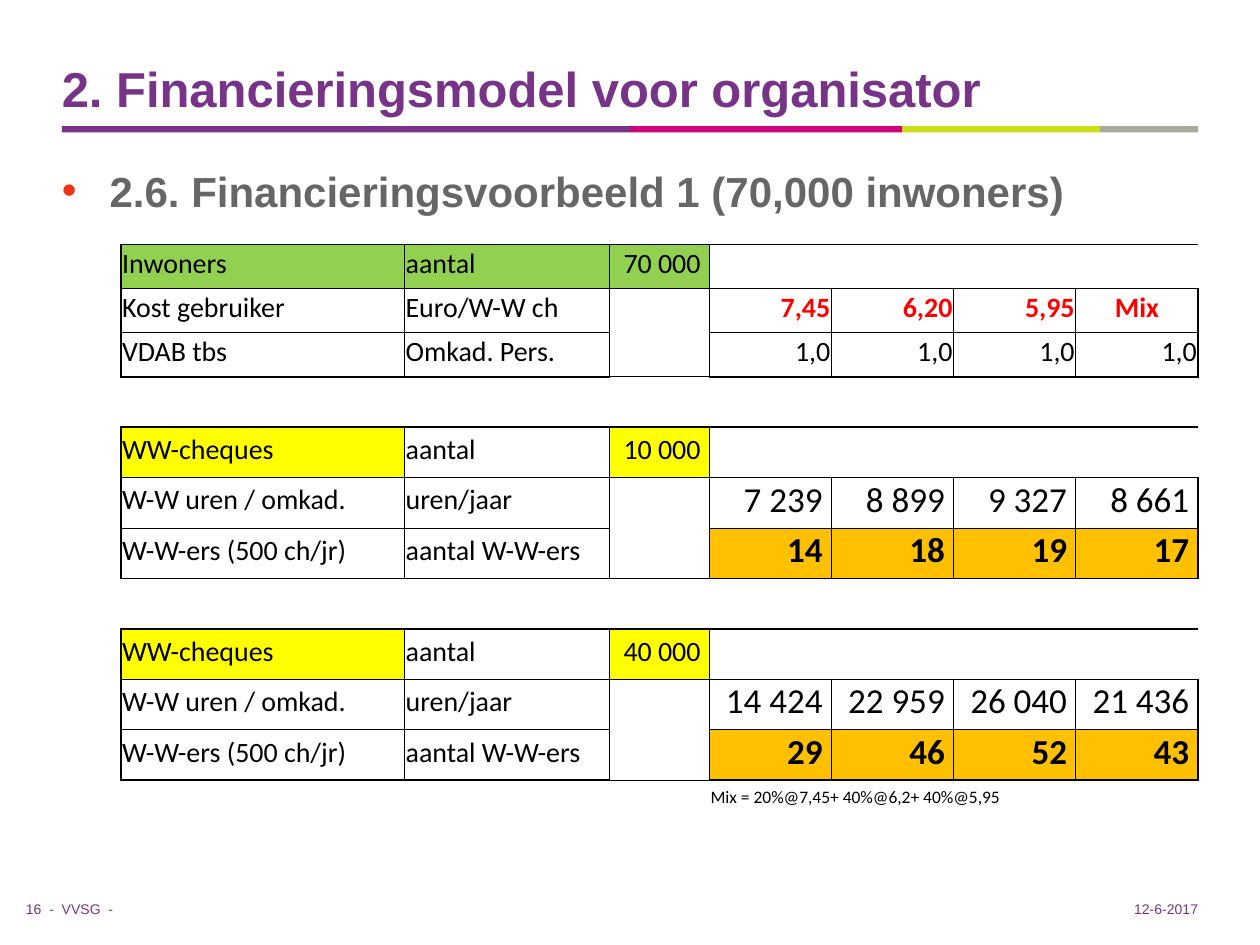
from lxml.etree import SubElement
from pptx import Presentation
from pptx.dml.color import RGBColor
from pptx.enum.shapes import MSO_SHAPE
from pptx.enum.text import MSO_ANCHOR, MSO_AUTO_SIZE, PP_ALIGN
from pptx.oxml.ns import qn
from pptx.util import Inches, Pt

PURPLE = "773388"
GREEN, YELLOW, ORANGE = "92D050", "FFFF00", "FFC000"
NO_STYLE = "{2D5ABB26-0587-4C30-8999-92F81FD0307C}"
COL_WIDTHS = [2.25, 1.63, 0.79, 0.97, 0.97, 0.97, 0.97]
ROW_HEIGHTS = [0.35] * 3 + [0.4] * 8 + [0.32]
NOTE = "Mix = 20%@7,45+ 40%@6,2+ 40%@5,95"


def cheque_block(cheques, hours, workers):
    return [
        ["WW-cheques", "aantal", cheques],
        ["W-W uren / omkad.", "uren/jaar", "", *hours],
        ["W-W-ers (500 ch/jr)", "aantal W-W-ers", "", *workers],
    ]


BLOCKS = [
    [
        ["Inwoners", "aantal", "70 000"],
        ["Kost gebruiker", "Euro/W-W ch", "", "7,45", "6,20", "5,95", "Mix"],
        ["VDAB tbs", "Omkad. Pers.", "", "1,0", "1,0", "1,0", "1,0"],
    ],
    cheque_block("10 000", ["7 239", "8 899", "9 327", "8 661"], ["14", "18", "19", "17"]),
    cheque_block("40 000", ["14 424", "22 959", "26 040", "21 436"], ["29", "46", "52", "43"]),
]


def color(value):
    return RGBColor.from_string(value)


def place(sp, box):
    sp.left, sp.top, sp.width, sp.height = [Inches(v) for v in box]


def format_runs(p, size, hue, bold=False, name="Arial"):
    for r in p.runs:
        r.font.name, r.font.size, r.font.bold = name, Pt(size), bold
        r.font.color.rgb = color(hue)


def set_frame(tf, anchor):
    tf.margin_left = tf.margin_top = tf.margin_right = tf.margin_bottom = 0
    tf.vertical_anchor = anchor
    tf.auto_size = MSO_AUTO_SIZE.NONE
    tf.word_wrap = True


def add_title(s, box, text):
    sp = s.shapes.title
    place(sp, box)
    tf = sp.text_frame
    tf.text = text
    set_frame(tf, MSO_ANCHOR.BOTTOM)
    tf.paragraphs[0].alignment = PP_ALIGN.LEFT
    format_runs(tf.paragraphs[0], 28, PURPLE, True)


def add_body(s, box, text):
    sp = s.placeholders[1]
    place(sp, box)
    tf = sp.text_frame
    tf.text = text
    set_frame(tf, MSO_ANCHOR.TOP)
    p = tf.paragraphs[0]
    p.space_before = Pt(0)
    pPr = p._p.get_or_add_pPr()
    pPr.set("marL", str(Inches(0.38)))
    pPr.set("indent", str(-Inches(0.38)))
    SubElement(SubElement(pPr, qn("a:buClr")), qn("a:srgbClr"), val="EE3311")
    SubElement(pPr, qn("a:buChar"), char="•")
    format_runs(p, 24, "666666", True)


def add_color_bar(s, box):
    left, top, _, height = box
    for width, hue in [(4.51, PURPLE), (2.16, "CC0077"), (1.57, "CCDD11"), (0.78, "AAAA99")]:
        sp = s.shapes.add_shape(MSO_SHAPE.RECTANGLE, 0, 0, 0, 0)
        place(sp, (left, top, width, height))
        sp.shadow.inherit = False
        sp.fill.solid()
        sp.fill.fore_color.rgb = color(hue)
        sp.line.fill.background()
        left += width


def add_footer(s, box, text, align):
    sp = s.shapes.add_textbox(0, 0, 0, 0)
    place(sp, box)
    tf = sp.text_frame
    tf.text = text
    set_frame(tf, MSO_ANCHOR.BOTTOM)
    tf.paragraphs[0].alignment = align
    format_runs(tf.paragraphs[0], 8, PURPLE)


def set_borders(cell, widths):
    tcPr = cell._tc.get_or_add_tcPr()
    for side in "LRTB":
        if side in widths:
            ln = SubElement(tcPr, qn(f"a:ln{side}"), w=str(Pt(widths[side])))
            fill = SubElement(ln, qn("a:solidFill"))
            SubElement(fill, qn("a:srgbClr"), val="000000")


def block_borders(row, col):
    widths = {
        "L": 1 if col == 0 else 0.5,
        "R": 1 if col == 6 else 0.5,
        "T": 1 if row == 0 else 0.5,
        "B": 1 if row == 2 else 0.5,
    }
    hidden = ""
    if row == 0 and col >= 3:
        hidden = "R" if col == 3 else "LR"
    elif row > 0 and col == 2:
        hidden = "B" if row == 1 else "TB"
    return {side: w for side, w in widths.items() if side not in hidden}


def block_style(block, row, col):
    fill, size, hue, bold = None, 16, "000000", False
    if row == 0 and col < 3:
        if block == 0:
            fill = GREEN
        elif col != 1:
            fill = YELLOW
    elif col >= 3 and block > 0 and row > 0:
        size, bold = 20, row == 2
        fill = ORANGE if row == 2 else None
    elif col >= 3 and row == 1:
        hue, bold = "FF0000", True
    return fill, size, hue, bold


def fill_cell(cell, text, fill=None, size=10, hue="000000", bold=False, align=PP_ALIGN.LEFT):
    cell.margin_left = cell.margin_top = cell.margin_right = Inches(0.01)
    cell.margin_bottom = Inches(0.05)
    cell.vertical_anchor = MSO_ANCHOR.MIDDLE
    if fill:
        cell.fill.solid()
        cell.fill.fore_color.rgb = color(fill)
    else:
        cell.fill.background()
    p = cell.text_frame.paragraphs[0]
    if not text:
        SubElement(p._p, qn("a:endParaRPr"), sz="1000")
        return
    p.text = text
    p.alignment = align
    if align == PP_ALIGN.RIGHT and "," not in text:
        cell.margin_right = Inches(0.07)
    format_runs(p, size, hue, bold, "Calibri")


def add_cost_table(s, box):
    frame = s.shapes.add_table(len(ROW_HEIGHTS), len(COL_WIDTHS), *[Inches(v) for v in box])
    table = frame.table
    table.first_row = table.horz_banding = False
    table._tbl.tblPr.find(qn("a:tableStyleId")).text = NO_STYLE
    for column, width in zip(table.columns, COL_WIDTHS):
        column.width = Inches(width)
    for i, height in enumerate(ROW_HEIGHTS):
        table.rows[i].height = Inches(height)
        block, row = divmod(i, 4)
        for col in range(len(COL_WIDTHS)):
            cell = table.cell(i, col)
            if row == 3:
                fill_cell(cell, NOTE if (block, col) == (2, 3) else "")
                continue
            texts = BLOCKS[block][row]
            text = texts[col] if col < len(texts) else ""
            align = PP_ALIGN.LEFT if col < 2 else PP_ALIGN.RIGHT
            if text == "Mix":
                align = PP_ALIGN.CENTER
            set_borders(cell, block_borders(row, col))
            fill_cell(cell, text, *block_style(block, row, col), align)
    for top in range(0, len(ROW_HEIGHTS), 4):
        table.cell(top, 3).merge(table.cell(top, 6))
        table.cell(top + 1, 2).merge(table.cell(top + 2, 2))
    table.cell(11, 3).merge(table.cell(11, 6))


def main():
    prs = Presentation()
    prs.slide_width, prs.slide_height = Inches(10), Inches(7.5)
    s = prs.slides.add_slide(prs.slide_layouts[1])
    add_color_bar(s, (0.49, 1, 9.02, 0.05))
    add_title(s, (0.49, 0, 8.04, 0.93), "2. Financieringsmodel voor organisator")
    add_body(s, (0.49, 1.31, 9.51, 5.75), "2.6. Financieringsvoorbeeld 1 (70,000 inwoners)")
    add_footer(s, (0, 7.15, 0.43, 0.13), "16  -", PP_ALIGN.RIGHT)
    add_footer(s, (0.49, 7.15, 0.47, 0.13), "VVSG  -", PP_ALIGN.LEFT)
    add_footer(s, (8.73, 7.15, 0.78, 0.13), "12-6-2017", PP_ALIGN.RIGHT)
    add_cost_table(s, (0.96, 1.94, 8.55, 4.57))
    prs.save("out.pptx")


if __name__ == "__main__":
    main()
